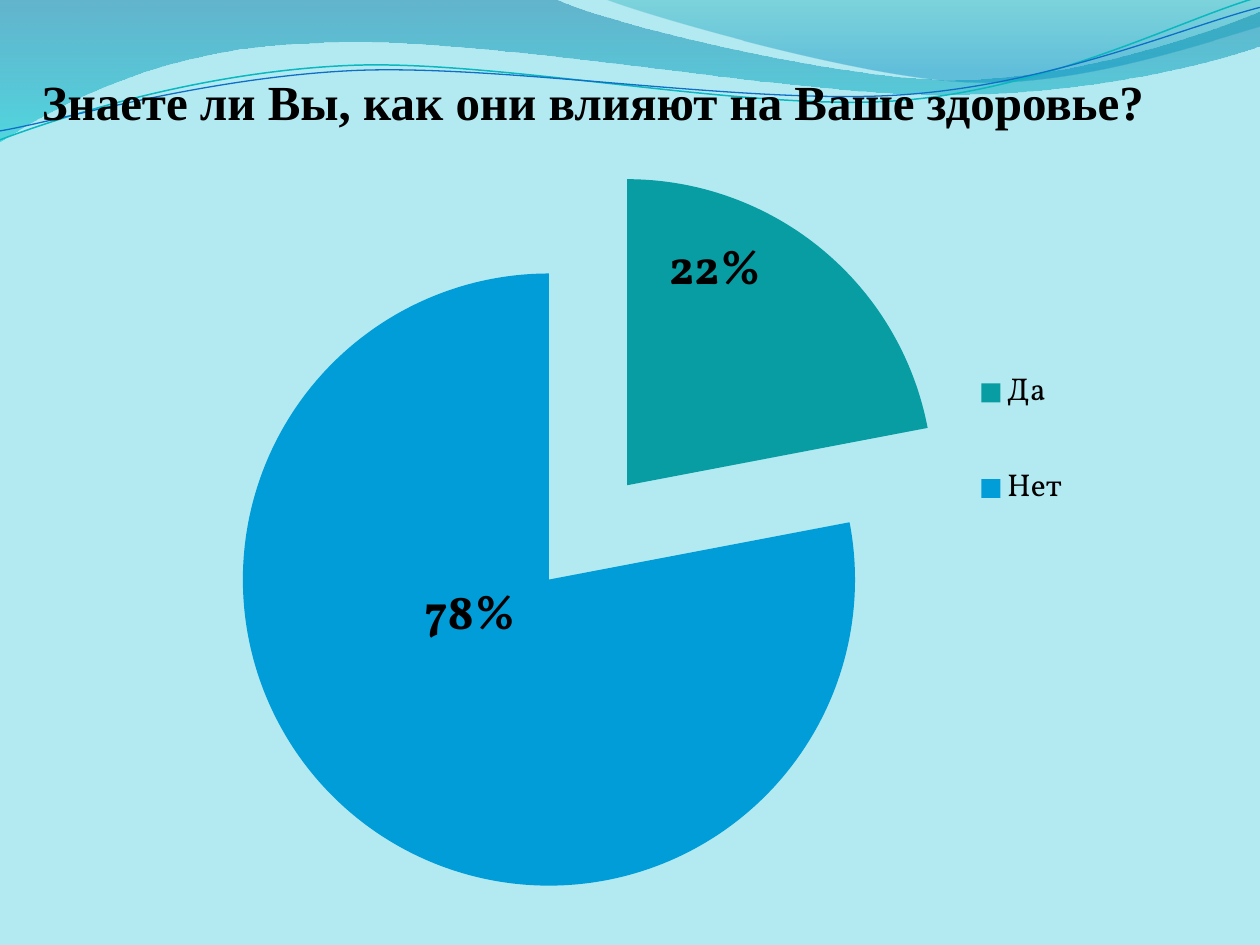
from dataclasses import dataclass
from typing import Optional

from lxml.etree import SubElement
from pptx import Presentation
from pptx.chart.data import CategoryChartData
from pptx.dml.color import RGBColor
from pptx.enum.chart import XL_CHART_TYPE as ChartType
from pptx.enum.chart import XL_LABEL_POSITION as LabelPosition
from pptx.enum.chart import XL_LEGEND_POSITION as LegendPosition
from pptx.enum.text import PP_ALIGN as Align
from pptx.oxml import parse_xml
from pptx.oxml.ns import nsdecls, qn
from pptx.util import Cm, Pt

UNITS_PER_CM = 100


@dataclass(frozen=True)
class GradientStop:
    position: float
    color: str
    opacity: int


@dataclass(frozen=True)
class Wave:
    start: tuple[float, float]
    segments: tuple[tuple[float, ...], ...]
    gradient: tuple[GradientStop, ...] = ()
    line_color: Optional[str] = None
    line_width: float = 0


@dataclass(frozen=True)
class Answer:
    name: str
    share: int
    color: str
    label_shift: tuple[float, float]


WAVES = (
    Wave(
        (0, 0),
        (
            (11.18, -0.03),
            (12.09, 0.43, 16.87, 1.6, 19.25, 1.6),
            (21.67, 1.6, 24.33, 0.66, 25.4, 0.23),
            (25.43, 0.91),
            (24.97, 1.12, 22.1, 1.93, 18.95, 1.91),
            (15.8, 1.91, 9.7, 0.71, 6.53, 0.86),
            (3.28, 0.91, 1.17, 2.11, -0.03, 2.87),
        ),
        gradient=(GradientStop(0, "0074A1", 45), GradientStop(1, "00C6CF", 55)),
    ),
    Wave(
        (12.17, -0.03),
        (
            (12.93, 0.28, 17.32, 1.57, 19.53, 1.65),
            (21.74, 1.75, 24.41, 0.81, 25.4, 0.53),
            (25.4, 0),
        ),
        gradient=(GradientStop(0, "00A1A9", 30), GradientStop(0.8, "008BBF", 45)),
    ),
    Wave(
        (0, 2.82),
        (
            (1.22, 2.36, 4.01, 1.45, 7.04, 1.32),
            (10.03, 1.19, 15.06, 2.26, 18.11, 2.03),
            (21.16, 1.8, 23.83, 0.38, 25.35, -0.05),
        ),
        line_color="0AB8BF",
        line_width=0.85,
    ),
    Wave(
        (0, 2.64),
        (
            (1.19, 2.44, 4.17, 1.55, 7.19, 1.42),
            (10.24, 1.3, 15.16, 2.13, 18.21, 1.91),
            (21.23, 1.7, 23.9, 0.53, 25.4, 0.15),
        ),
        line_color="0F6FC6",
        line_width=0.75,
    ),
)

ANSWERS = (
    Answer("Да", 22, "089CA3", (-0.01, -0.13)),
    Answer("Нет", 78, "009DD9", (0.02, -0.11)),
)


def rgb(color: str) -> RGBColor:
    return RGBColor.from_string(color)


def bend(shape, segments: tuple[tuple[float, ...], ...]) -> None:
    lines = iter(list(shape.element.iter(qn("a:lnTo"))))
    for segment in segments:
        first, *others = [next(lines) for _ in range(len(segment) // 2)]
        if others:
            first.tag = qn("a:cubicBezTo")
            for line in others:
                first.append(line[0])
                line.getparent().remove(line)


def draw_wave(slide, wave: Wave) -> None:
    start, *points = [
        (segment[i] * UNITS_PER_CM, segment[i + 1] * UNITS_PER_CM)
        for segment in (wave.start, *wave.segments)
        for i in range(0, len(segment), 2)
    ]
    builder = slide.shapes.build_freeform(*start, scale=Cm(1) / UNITS_PER_CM)
    builder.add_line_segments(points, close=bool(wave.gradient))
    shape = builder.convert_to_shape()
    bend(shape, wave.segments)
    shape.shadow.inherit = False
    if not wave.gradient:
        shape.fill.background()
        shape.line.color.rgb = rgb(wave.line_color)
        shape.line.width = Pt(wave.line_width)
        return
    shape.line.fill.background()
    shape.fill.gradient()
    shape.fill.gradient_angle = 270
    for target, stop in zip(shape.fill.gradient_stops, wave.gradient):
        target.position = stop.position
        target.color.rgb = rgb(stop.color)
    for element, stop in zip(shape.element.spPr.iter(qn("a:srgbClr")), wave.gradient):
        SubElement(element, qn("a:alpha"), val=str(stop.opacity * 1000))


def style_font(font, name: str, size: float, bold: bool = False) -> None:
    font.name = name
    font.size = Pt(size)
    font.bold = bold
    font.color.rgb = rgb("000000")


def manual_layout(**settings):
    items = "".join(f'<c:{key} val="{value}"/>' for key, value in settings.items())
    return parse_xml(
        f"<c:layout {nsdecls('c')}><c:manualLayout>{items}</c:manualLayout></c:layout>"
    )


def add_title(slide, text: str) -> None:
    frame = slide.shapes.add_textbox(Cm(0), Cm(1.32), Cm(23.6), Cm(3.2)).text_frame
    frame.word_wrap = True
    paragraph = frame.paragraphs[0]
    paragraph.alignment = Align.CENTER
    paragraph.space_before = Pt(5.6)
    paragraph._p.get_or_add_pPr().set("marL", str(Cm(0.3)))
    run = paragraph.add_run()
    run.text = text
    style_font(run.font, "Times New Roman", 28, bold=True)


def style_point(series, index: int, answer: Answer) -> None:
    point = series.points[index]
    point.format.fill.solid()
    point.format.fill.fore_color.rgb = rgb(answer.color)
    style_font(point.data_label.font, "Vollkorn", 28, bold=True)
    point.data_label.position = LabelPosition.CENTER
    label = series.data_labels._element.findall(qn("c:dLbl"))[index]
    x, y = answer.label_shift
    label.find(qn("c:idx")).addnext(manual_layout(x=x, y=y))
    label.find(qn("c:showVal")).set("val", "0")
    label.find(qn("c:showPercent")).set("val", "1")


def add_pie(slide, answers: tuple[Answer, ...]) -> None:
    data = CategoryChartData()
    data.categories = [answer.name for answer in answers]
    data.add_series("Series 1", [answer.share for answer in answers])
    chart = slide.shapes.add_chart(
        ChartType.PIE, Cm(3.3), Cm(3.33), Cm(18.8), Cm(14.81), data
    ).chart
    chart.has_title = False
    style_font(chart.font, "Vollkorn", 18)

    chart.has_legend = True
    chart.legend.position = LegendPosition.RIGHT
    chart.legend.include_in_layout = False
    chart.legend._element.find(qn("c:legendPos")).addnext(
        manual_layout(xMode="edge", yMode="edge", x=0.86, y=0.21, w=0.12, h=0.33)
    )
    plot_area = chart._chartSpace.chart.plotArea
    for layout in plot_area.findall(qn("c:layout")):
        plot_area.remove(layout)
    plot_area.insert(
        0, manual_layout(layoutTarget="inner", xMode="edge", yMode="edge", x=0, y=0, w=0.91, h=1)
    )

    plot = chart.plots[0]
    plot.vary_by_categories = True
    series = plot.series[0]
    labels = series.data_labels
    labels.show_percentage = True
    labels.show_value = False
    labels.number_format = "0%"
    labels.number_format_is_linked = False
    style_font(labels.font, "Vollkorn", 28, bold=True)
    for index, answer in enumerate(answers):
        style_point(series, index, answer)
    explosion = parse_xml(f'<c:explosion {nsdecls("c")} val="20"/>')
    series._element.find(qn("c:dPt")).addprevious(explosion)


def main() -> None:
    presentation = Presentation()
    presentation.slide_width, presentation.slide_height = Cm(25.4), Cm(19.05)
    slide = presentation.slides.add_slide(presentation.slide_layouts[6])
    slide.background.fill.solid()
    slide.background.fill.fore_color.rgb = rgb("B3EAF2")
    for wave in WAVES:
        draw_wave(slide, wave)
    add_title(slide, "Знаете ли Вы, как они влияют на Ваше здоровье?")
    add_pie(slide, ANSWERS)
    presentation.save("out.pptx")


if __name__ == "__main__":
    main()
